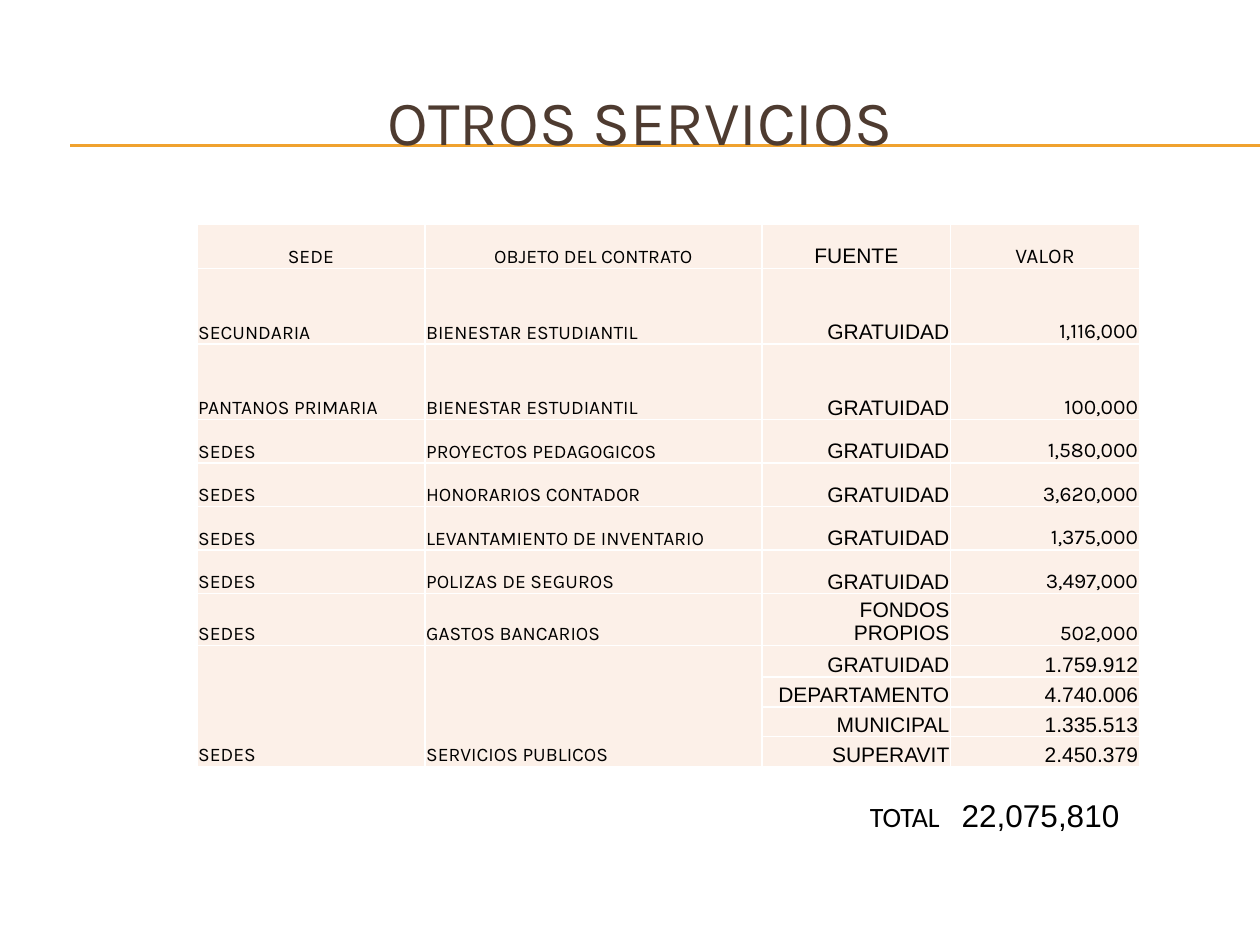
from dataclasses import dataclass

from lxml import etree
from pptx import Presentation
from pptx import util as u
from pptx.dml.color import RGBColor
from pptx.enum import shapes, text
from pptx.oxml.ns import qn


@dataclass(frozen=True)
class Theme:
    heading_font: str = "Karla"
    body_font: str = "Arial"
    label_font: str = "Calibri"
    title_color: str = "4E3B30"
    text_color: str = "000000"
    rule_color: str = "F0A22E"
    cell_fill: str = "FCF0E8"
    border_color: str = "FFFFFF"
    title_size: float = 36
    total_size: float = 18
    label_size: float = 16
    value_size: float = 12
    cell_size: float = 11


class SlideBuilder:
    """Draws styled elements, measured in points, on the current slide."""

    def __init__(self, slide, theme):
        self.slide = slide
        self.theme = theme

    def style(self, font, name, size, color):
        font.name = name
        font.size = u.Pt(size)
        font.color.rgb = RGBColor.from_string(color)

    def rule(self, left, right, top):
        line = self.slide.shapes.add_connector(
            shapes.MSO_CONNECTOR.STRAIGHT, u.Pt(left), u.Pt(top), u.Pt(right), u.Pt(top))
        line.line.color.rgb = RGBColor.from_string(self.theme.rule_color)
        line.line.width = u.Pt(0.75)
        etree.SubElement(line._element.spPr, qn("a:effectLst"))

    def text_box(self, left, top, width, height):
        frame = self.slide.shapes.add_textbox(
            u.Pt(left), u.Pt(top), u.Pt(width), u.Pt(height)).text_frame
        frame.word_wrap = True
        return frame

    def title(self, wording, left, top, width, height):
        frame = self.text_box(left, top, width, height)
        frame.vertical_anchor = text.MSO_ANCHOR.MIDDLE
        paragraph = frame.paragraphs[0]
        paragraph.text = wording
        paragraph.alignment = text.PP_ALIGN.CENTER
        theme = self.theme
        self.style(paragraph.font, theme.heading_font, theme.title_size, theme.title_color)

    def total(self, label, value, left, top, width, height, tab):
        frame = self.text_box(left, top, width, height)
        frame.auto_size = text.MSO_AUTO_SIZE.SHAPE_TO_FIT_TEXT
        paragraph = frame.paragraphs[0]
        theme = self.theme
        for wording, name, size in ((label, theme.label_font, theme.label_size),
                                    ("\t" + value, theme.body_font, theme.total_size)):
            run = paragraph.add_run()
            run.text = wording
            self.style(run.font, name, size, theme.text_color)
        stops = etree.SubElement(paragraph._p.get_or_add_pPr(), qn("a:tabLst"))
        etree.SubElement(stops, qn("a:tab"), pos=str(u.Pt(tab)), algn="l")

    def borders(self, cell):
        properties = cell._tc.get_or_add_tcPr()
        for index, side in enumerate(("lnL", "lnR", "lnT", "lnB")):
            line = etree.Element(qn(f"a:{side}"), w=str(u.Pt(1)))
            fill = etree.SubElement(line, qn("a:solidFill"))
            etree.SubElement(fill, qn("a:srgbClr"), val=self.theme.border_color)
            properties.insert(index, line)

    def cell(self, cell, wording, alignment, name, size):
        cell.fill.solid()
        cell.fill.fore_color.rgb = RGBColor.from_string(self.theme.cell_fill)
        self.borders(cell)
        cell.margin_left = cell.margin_right = cell.margin_top = u.Pt(0.72)
        cell.margin_bottom = 0
        cell.vertical_anchor = text.MSO_ANCHOR.BOTTOM
        paragraph = cell.text_frame.paragraphs[0]
        paragraph.text = wording
        paragraph.alignment = alignment
        self.style(paragraph.font, name, size, self.theme.text_color)

    def table(self, rows, left, top, widths, heights, merged_from):
        table = self.slide.shapes.add_table(
            len(rows), len(widths), u.Pt(left), u.Pt(top),
            u.Pt(sum(widths)), u.Pt(sum(heights))).table
        table.first_row = table.horz_banding = False
        for column, width in zip(table.columns, widths):
            column.width = u.Pt(width)
        for row, height in zip(table.rows, heights):
            row.height = u.Pt(height)
        theme = self.theme
        for r, row in enumerate(rows):
            for c, wording in enumerate(row):
                if r == 0:
                    alignment = text.PP_ALIGN.CENTER
                else:
                    alignment = text.PP_ALIGN.LEFT if c < 2 else text.PP_ALIGN.RIGHT
                plain = c == 2 or (c == 3 and r >= merged_from)
                self.cell(table.cell(r, c), wording, alignment,
                          theme.body_font if plain else theme.heading_font,
                          theme.cell_size if c < 2 else theme.value_size)
        for c in range(2):
            table.cell(merged_from, c).merge(table.cell(len(rows) - 1, c))


CONTRACTS = [
    ("SEDE", "OBJETO DEL CONTRATO", "FUENTE", "VALOR"),
    ("SECUNDARIA", "BIENESTAR ESTUDIANTIL", "GRATUIDAD", "1,116,000"),
    ("PANTANOS PRIMARIA", "BIENESTAR ESTUDIANTIL", "GRATUIDAD", "100,000"),
    ("SEDES", "PROYECTOS PEDAGOGICOS", "GRATUIDAD", "1,580,000"),
    ("SEDES", "HONORARIOS CONTADOR", "GRATUIDAD", "3,620,000"),
    ("SEDES", "LEVANTAMIENTO DE INVENTARIO", "GRATUIDAD", "1,375,000"),
    ("SEDES", "POLIZAS DE SEGUROS", "GRATUIDAD", "3,497,000"),
    ("SEDES", "GASTOS BANCARIOS", "FONDOS PROPIOS", "502,000"),
    ("SEDES", "SERVICIOS PUBLICOS", "GRATUIDAD", "1.759.912"),
    ("", "", "DEPARTAMENTO", "4.740.006"),
    ("", "", "MUNICIPAL", "1.335.513"),
    ("", "", "SUPERAVIT", "2.450.379"),
]


def main():
    presentation = Presentation()
    presentation.slide_width, presentation.slide_height = u.Pt(720), u.Pt(540)
    slide = presentation.slides.add_slide(presentation.slide_layouts[6])
    builder = SlideBuilder(slide, Theme())
    for top in (82.8, 83.5):
        builder.rule(40.3, 720, top)
    builder.title("OTROS SERVICIOS", 23.8, 36, 684, 66)
    builder.table(CONTRACTS, 112.5, 128.4, widths=[130.3, 192.7, 107.8, 107.8],
                  heights=[24.9] + [43.2] * 2 + [24.9] * 5 + [18] + [17.1] * 3,
                  merged_from=8)
    builder.total("TOTAL", "22,075,810", 490, 451.4, 160.6, 28.8, tab=52.5)
    presentation.save("out.pptx")


if __name__ == "__main__":
    main()
